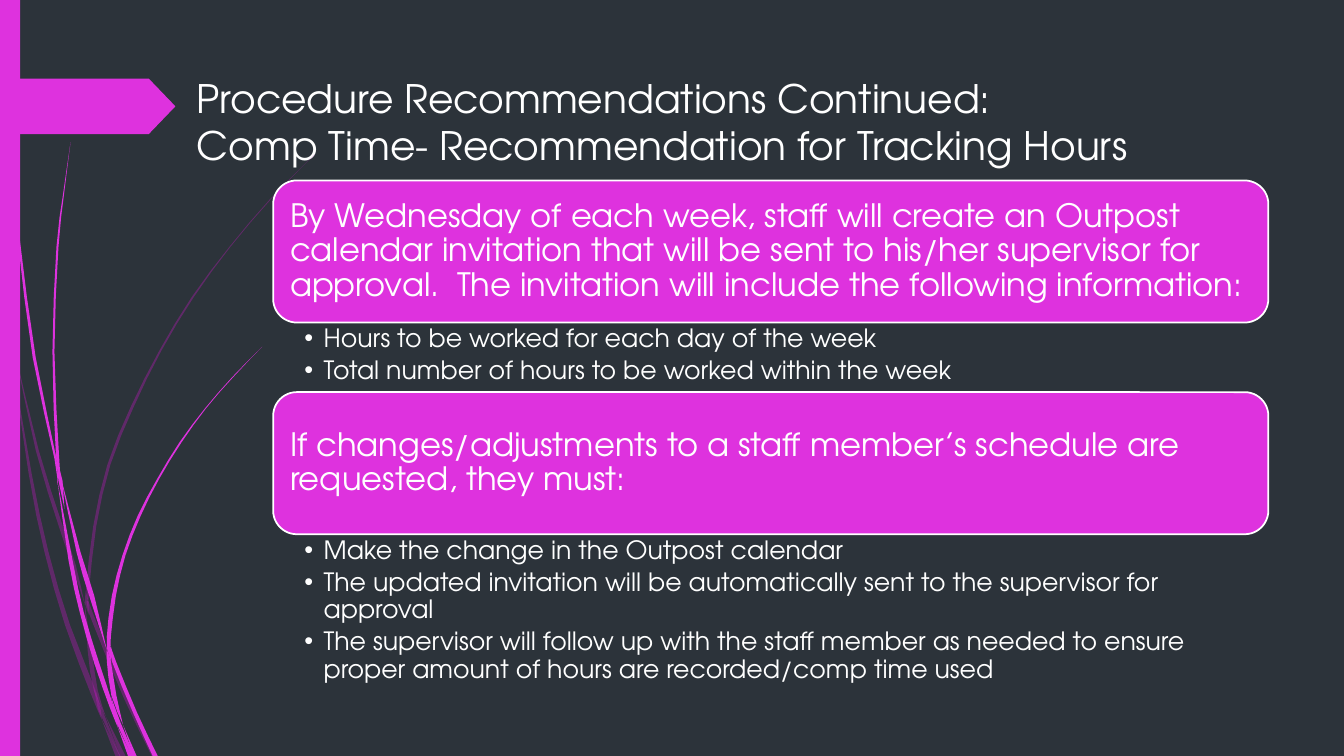
from lxml import etree
from pptx import Presentation
from pptx.dml.color import RGBColor
from pptx.enum.shapes import MSO_SHAPE
from pptx.enum.text import MSO_ANCHOR, MSO_AUTO_SIZE, PP_ALIGN
from pptx.oxml.ns import qn
from pptx.util import Pt

RECT, ROUND_RECT, PENTAGON = MSO_SHAPE.RECTANGLE, MSO_SHAPE.ROUNDED_RECTANGLE, MSO_SHAPE.PENTAGON
TOP, MIDDLE, LEFT = MSO_ANCHOR.TOP, MSO_ANCHOR.MIDDLE, PP_ALIGN.LEFT
NO_FIT = MSO_AUTO_SIZE.NONE

PX = 9144  # 100 px to the inch
WIDTH, HEIGHT = 1333, 750
FONT = "TeX Gyre Adventor"
DARK = RGBColor(0x2C, 0x33, 0x3A)
PINK = RGBColor(0xDE, 0x32, 0xDE)
PURPLE = RGBColor(0xB0, 0x1C, 0xB0)
WHITE = RGBColor(0xFF, 0xFF, 0xFF)

TITLE = "Procedure Recommendations Continued:\vComp Time- Recommendation for Tracking Hours"
SECTIONS = [
    ("By Wednesday of each week, staff will create an Outpost calendar invitation that will be "
     "sent to his/her supervisor for approval.  The invitation will include the following "
     "information:",
     ["Hours to be worked for each day of the week",
      "Total number of hours to be worked within the week"], 69),
    ("If changes/adjustments to a staff member’s schedule are requested, they must:",
     ["Make the change in the Outpost calendar",
      "The updated invitation will be automatically sent to the supervisor for approval",
      "The supervisor will follow up with the staff member as needed to ensure proper amount "
      "of hours are recorded/comp time used"], 159),
]

# Blades of grass, tapered and joined end to end: centre x, y and width at each knot
FAINT_BLADES = [
    [(0, 282, 2), (5, 310, 3), (11, 350, 0)],
    [(14, 345, 0), (37, 447, 3), (60, 521, 4), (73, 560, 4), (84, 599, 0)],
    [(88, 596, 0), (90, 608, 4), (125, 693, 4), (153, 750, 5)],
    [(105, 711, 0), (122, 750, 5)],
    [(11, 350, 0), (30, 470, 3), (46, 547, 4), (67, 620, 5), (93, 688, 6), (101, 714, 0)],
    [(84, 599, 0), (89, 646, 4), (95, 685, 4), (105, 711, 0)],
    [(312, 153, 0), (268, 198, 1), (228, 245, 1), (191, 295, 2), (159, 348, 2), (131, 404, 3),
     (108, 461, 3), (94, 522, 3), (87, 584, 3), (88, 596, 0)],
    [(101, 714, 0), (117, 750, 5)],
    [(85, 586, 0), (86, 598, 4), (88, 610, 0)],
    [(93, 683, 0), (99, 703, 4), (119, 750, 1)],
]
BRIGHT_BLADES = [
    [(4, 0, 1), (7, 110, 1), (18, 232, 2), (34, 355, 3), (55, 455, 2), (57, 481, 0)],
    [(60, 472, 0), (78, 548, 4), (91, 591, 5), (106, 645, 0)],
    [(110, 641, 0), (113, 656, 4), (134, 707, 4), (154, 750, 5)],
    [(57, 477, 0), (70, 556, 4), (81, 607, 4), (96, 658, 5), (111, 702, 4), (117, 722, 0)],
    [(70, 141, 0), (63, 193, 1), (57, 245, 2), (53, 349, 2), (57, 451, 3), (60, 472, 0)],
    [(122, 719, 0), (134, 750, 3)],
    [(55, 449, 0), (60, 477, 4), (64, 505, 0)],
    [(260, 344, 0), (231, 374, 1), (204, 405, 1), (179, 439, 2), (157, 475, 2), (138, 512, 3),
     (123, 551, 3), (113, 591, 4), (108, 632, 4), (110, 641, 0)],
    [(117, 722, 0), (129, 750, 4)],
    [(106, 645, 0), (108, 656, 4), (113, 690, 5), (122, 719, 0)],
    [(106, 631, 0), (108, 643, 4), (110, 656, 0)],
    [(110, 691, 0), (118, 718, 4), (132, 750, 3)],
]


def place(sp, x, y, w, h):
    sp.left, sp.top, sp.width, sp.height = x * PX, y * PX, w * PX, h * PX


def paint(sp, color, alpha=None):
    sp.shadow.inherit = False
    sp.fill.solid()
    sp.fill.fore_color.rgb = color
    sp.line.fill.background()
    if alpha:
        clr = sp.fill._xPr.find(".//" + qn("a:srgbClr"))
        etree.SubElement(clr, qn("a:alpha")).set("val", str(alpha * 1000))


def add_shape(slide, kind, x, y, w, h):
    sp = slide.shapes.add_shape(kind, x * PX, y * PX, w * PX, h * PX)
    paint(sp, PINK)
    return sp


def set_frame(tf, anchor, insets):
    tf.word_wrap = True
    tf.auto_size = NO_FIT
    tf.vertical_anchor = anchor
    tf.margin_left, tf.margin_top, tf.margin_right, tf.margin_bottom = [i * PX for i in insets]


def format_paragraph(p, size, spacing, after=0):
    p.alignment = LEFT
    p.line_spacing = spacing
    p.space_before, p.space_after = Pt(0), Pt(after)
    for r in p.runs:
        r.font.size = Pt(size)
        r.font.name = FONT
        r.font.color.rgb = WHITE


def smooth(knots):
    """Catmull-Rom curve through the knots; short blades stay straight."""
    steps = 2 if len(knots) > 3 else 1
    ends = [knots[0], *knots, knots[-1]]
    for a, b, c, d in zip(ends, ends[1:], ends[2:], ends[3:]):
        for t in (i / steps for i in range(steps)):
            yield tuple(q + t * (r - p + t * (2 * p - 5 * q + 4 * r - s + t * (3 * q - p - 3 * r + s))) / 2
                        for p, q, r, s in zip(a, b, c, d))
    yield knots[-1]


def add_blade(slide, knots, color, alpha=None):
    curve = list(smooth(knots))
    edge = [(x - w / 2, y) for x, y, w in curve] + [(x + w / 2, y) for x, y, w in reversed(curve)]
    points = [(round(max(x, 0) * PX), round(y * PX)) for x, y in edge]
    builder = slide.shapes.build_freeform(*points[0], scale=1.0)
    builder.add_line_segments(points[1:], close=True)
    paint(builder.convert_to_shape(), color, alpha)


def add_decoration(slide, height):
    for knots in FAINT_BLADES:
        add_blade(slide, knots, PURPLE, 40)
    for knots in BRIGHT_BLADES:
        add_blade(slide, knots, PINK)
    add_shape(slide, RECT, 0, 0, 20, height)
    tag = add_shape(slide, PENTAGON, 0, 78, 174, 55)
    tag.adjustments[0] = 0.48


def add_title(slide, x, y, w, h):
    sp = slide.shapes.title
    place(sp, x, y, w, h)
    set_frame(sp.text_frame, TOP, (10, 5, 10, 5))
    p = sp.text_frame.paragraphs[0]
    p.text = TITLE
    format_paragraph(p, 28, 1.0)


def add_heading(slide, text, x, y, w, h):
    sp = add_shape(slide, ROUND_RECT, x, y, w, h)
    sp.line.color.rgb = WHITE
    sp.line.width = Pt(1.25)
    set_frame(sp.text_frame, MIDDLE, (10, 10, 10, 10))
    sp.text_frame.text = text
    format_paragraph(sp.text_frame.paragraphs[0], 23, 0.9)


def fill_list(sp, items, x, y, w, h):
    place(sp, x, y, w, h)
    tf = sp.text_frame
    set_frame(tf, TOP, (31, 3, 18, 3))
    tf.text = "\n".join(items)
    for p in tf.paragraphs:
        p.level = 1
        format_paragraph(p, 18, 0.9, 3.6)
        pPr = p._p.get_or_add_pPr()
        pPr.set("marL", str(19 * PX))
        pPr.set("indent", str(-19 * PX))
        etree.SubElement(pPr, qn("a:buChar")).set("char", "•")


def add_sections(slide, x, y, w, heading_h):
    lists = [sp for sp in slide.placeholders if sp.placeholder_format.idx in (1, 2)]
    for sp, (heading, items, list_h) in zip(lists, SECTIONS):
        add_heading(slide, heading, x, y, w, heading_h)
        fill_list(sp, items, x, y + heading_h, w, list_h)
        y += heading_h + list_h


def main():
    prs = Presentation()
    prs.slide_width, prs.slide_height = WIDTH * PX, HEIGHT * PX
    slide = prs.slides.add_slide(prs.slide_layouts[3])  # title and two lists
    slide.background.fill.solid()
    slide.background.fill.fore_color.rgb = DARK
    add_decoration(slide, HEIGHT)
    add_title(slide, 185, 69, 1073, 140)
    add_sections(slide, 271, 179, 987, 141)
    prs.save("out.pptx")


if __name__ == "__main__":
    main()
